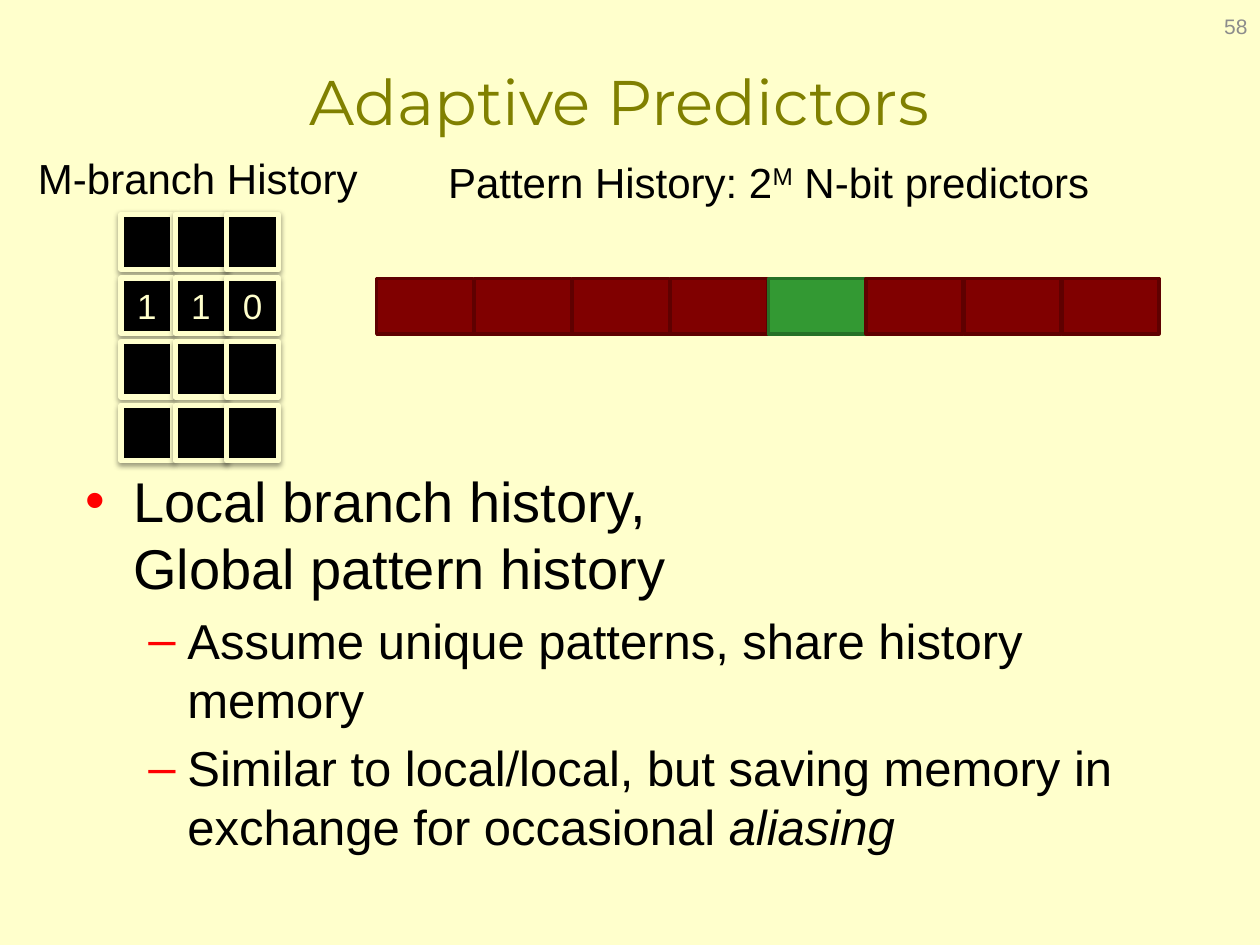
import pptx
import pptx.util
import pptx.dml.color
import pptx.enum.shapes
import pptx.enum.text
import pptx.oxml
import pptx.oxml.ns

Inches, Pt = pptx.util.Inches, pptx.util.Pt
ALIGN = pptx.enum.text.PP_ALIGN
ANCHOR = pptx.enum.text.MSO_ANCHOR
CREAM, BLACK, RED = "FFFFCC", "000000", "FF0000"

# Content: label = box, runs, size, font, colour, align, anchor
# A run is (text, style)
LABELS = [
    ((0.58, 0.17, 8.67, 1.25), [("Adaptive Predictors", "")],
     36, "Montserrat", "808000", ALIGN.CENTER, ANCHOR.MIDDLE),
    ((7.67, 0.01, 2.33, 0.4), [("58", "")],
     12, "Arial", "8C8C8C", ALIGN.RIGHT, ANCHOR.MIDDLE),
    ((0.19, 1.16, 2.76, 0.5), [("M-branch History", "")],
     24, "Arial", BLACK, ALIGN.CENTER, ANCHOR.TOP),
    ((2.99, 1.19, 6.22, 0.5),
     [("Pattern History: 2", ""), ("M", "super"), (" N-bit predictors", "")],
     24, "Arial", BLACK, ALIGN.CENTER, ANCHOR.TOP),
]
# Bullet = level, runs
BODY = [
    (0, [("Local branch history,", ""), ("\n", ""),
         ("Global pattern history", "")]),
    (1, [("Assume unique patterns, share history memory", "")]),
    (1, [("Similar to local/local, but saving memory in exchange for "
          "occasional ", ""), ("aliasing", "italic")]),
]
# Level = mark, size, left margin, indent
LEVELS = [("•", 32, 0.38, -0.38), ("–", 28, 0.81, -0.31)]
HISTORY = ["", "110", "", ""]
COLUMNS = [0.96, 1.39, 1.8]
CELLS, ACTIVE = 8, 4


def color(code):
    return pptx.dml.color.RGBColor.from_string(code)


def make(xml):
    return pptx.oxml.parse_xml(
        xml.replace(" ", f" {pptx.oxml.ns.nsdecls('a')} ", 1))


def write(para, runs, size, font, ink):
    for text, style in runs:
        if text == "\n":
            para.add_line_break()
            continue
        run = para.add_run()
        run.text = text
        run.font.size = Pt(size)
        run.font.name = font
        run.font.color.rgb = color(ink)
        if style == "italic":
            run.font.italic = True
        if style == "super":
            run._r.get_or_add_rPr().set("baseline", "30000")


def add_text(box, anchor=ANCHOR.TOP):
    frame = slide.shapes.add_textbox(*map(Inches, box)).text_frame
    frame.word_wrap = True
    frame.vertical_anchor = anchor
    return frame


def add_cell(group, box, fill, edge, width):
    cell = group.shapes.add_shape(
        pptx.enum.shapes.MSO_SHAPE.RECTANGLE, *map(Inches, box))
    cell.shadow.inherit = False
    cell.fill.solid()
    cell.fill.fore_color.rgb = color(fill)
    cell.line.color.rgb = color(edge)
    cell.line.width = Pt(width)
    return cell


def add_shadow(cell):
    effects = cell._element.spPr.find(pptx.oxml.ns.qn("a:effectLst"))
    effects.append(make(
        f'<a:outerShdw blurRad="{Pt(3.1)}" dist="{Pt(1.6)}" dir="5400000" '
        f'rotWithShape="0"><a:srgbClr val="{BLACK}"><a:alpha val="38000"/>'
        '</a:srgbClr></a:outerShdw>'))


deck = pptx.Presentation()
deck.slide_width, deck.slide_height = Inches(10), Inches(7.5)
slide = deck.slides.add_slide(deck.slide_layouts[6])
slide.background.fill.solid()
slide.background.fill.fore_color.rgb = color(CREAM)

# Title, page number and captions
for box, runs, size, font, ink, align, anchor in LABELS:
    para = add_text(box, anchor).paragraphs[0]
    para.alignment = align
    write(para, runs, size, font, ink)

# Bullets
frame = add_text((0.58, 3.65, 8.67, 3.51))
for i, (level, runs) in enumerate(BODY):
    para = frame.add_paragraph() if i else frame.paragraphs[0]
    mark, size, left, indent = LEVELS[level]
    para.level = level
    para.space_before = Pt(size * 0.2)
    props = para._p.get_or_add_pPr()
    props.set("marL", str(Inches(left)))
    props.set("indent", str(Inches(indent)))
    props.append(make(f'<a:buClr ><a:srgbClr val="{RED}"/></a:buClr>'))
    props.append(make('<a:buFont typeface="Arial"/>'))
    props.append(make(f'<a:buChar char="{mark}"/>'))
    write(para, runs, size, "Arial", BLACK)

# Pattern table
group = slide.shapes.add_group_shape()
for i in range(CELLS):
    fill, edge = ("339933", "267126") if i == ACTIVE else ("800000", "5F0000")
    add_cell(group, (2.99 + i * 0.777, 2.21, 0.77, 0.44), fill, edge, 2)

# Branch history rows
for row, bits in enumerate(HISTORY):
    group = slide.shapes.add_group_shape()
    for col, left in enumerate(COLUMNS):
        cell = add_cell(group, (left, 1.7 + row * 0.506, 0.41, 0.44),
                        BLACK, CREAM, 3)
        add_shadow(cell)
        if bits:
            para = cell.text_frame.paragraphs[0]
            para.alignment = ALIGN.CENTER
            write(para, [(bits[col], "")], 20, "Arial", CREAM)

deck.save("out.pptx")
